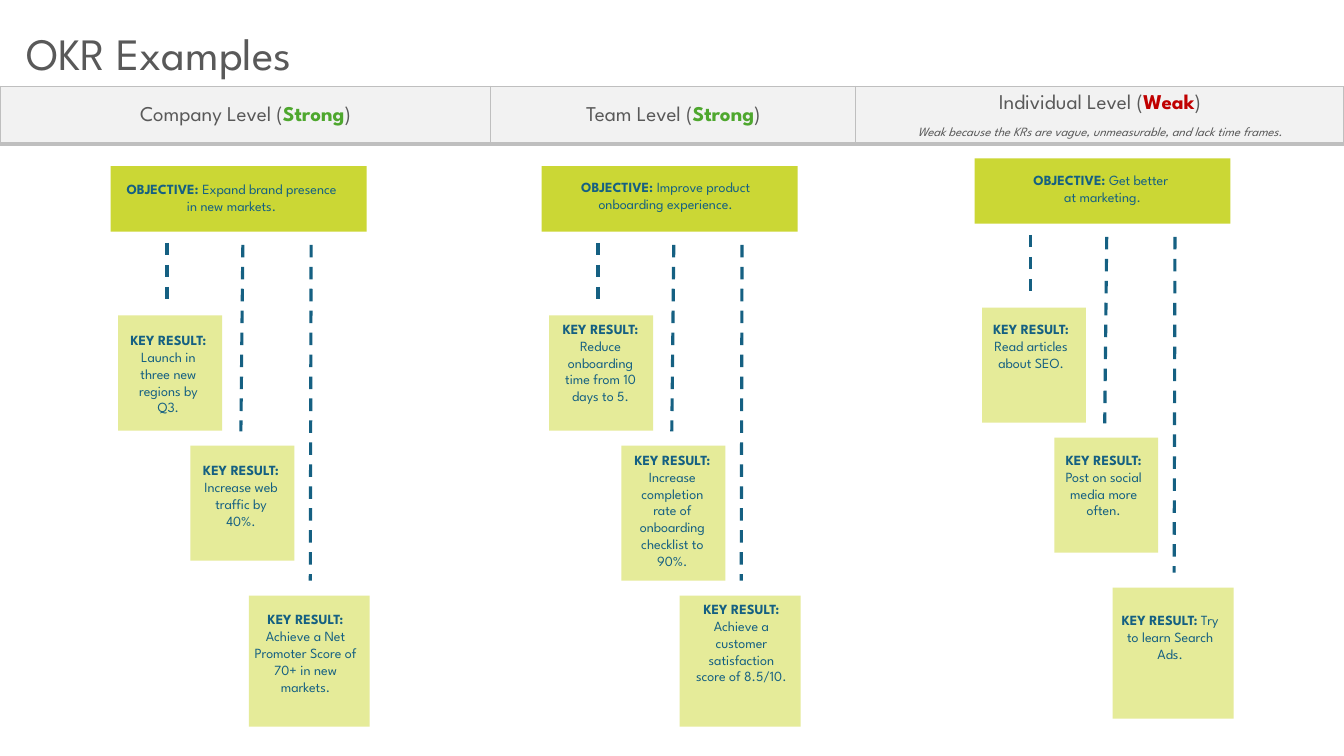
"""Build the OKR examples slide with three levels of objectives and key results."""
from lxml.etree import SubElement as Sub
from pptx import Presentation
from pptx.dml.color import RGBColor
from pptx.enum.dml import MSO_LINE as Dash
from pptx.enum.shapes import MSO_CONNECTOR as Conn, MSO_SHAPE as Shape
from pptx.enum.text import MSO_ANCHOR as Anchor, PP_ALIGN as Align
from pptx.oxml import parse_xml
from pptx.oxml.ns import nsdecls, qn
from pptx.util import Cm, Pt

FONT = "League Spartan"
GREY = RGBColor(0x59, 0x59, 0x59)
PALE = RGBColor(0xF2, 0xF2, 0xF2)
EDGE = RGBColor(0xBF, 0xBF, 0xBF)
GREEN = RGBColor(0x4E, 0xA7, 0x2E)
RED = RGBColor(0xC0, 0x00, 0x00)
LIME = RGBColor(0xCB, 0xD7, 0x35)
SOFT = RGBColor(0xE5, 0xEB, 0x99)
BLUE = RGBColor(0x15, 0x60, 0x82)

HEADS = [
    ("Company Level (", "Strong", GREEN, "", 12.37),
    ("Team Level (", "Strong", GREEN, "", 9.2),
    ("Individual Level (", "Weak", RED,
     "Weak because the KRs are vague, unmeasurable, and lack time frames.", 12.3),
]

GOAL = (0, 0, 6.45, 1.65)
CARDS = [(0.19, 3.76, 2.62, 2.9), (2.01, 7.04, 2.62, 2.9), (3.48, 10.82, 3.05, 3.3)]
LINES = [(1.42, 1.93, 1.42, 3.53), (3.33, 1.98, 3.28, 6.68), (5.05, 1.98, 5.03, 10.44)]

LEVELS = [
    {"at": (2.79, 4.19), "grow": (0, 0, 0), "notes": [
        ("Expand brand presence in new markets.", (2.9, 4.42, 5.87, 1.27)),
        ("Launch in three new regions by Q3.", (2.95, 8.23, 2.59, 2.51)),
        ("Increase web traffic by 40%.", (4.78, 11.51, 2.59, 2.01)),
        ("Achieve a Net Promoter Score of 70+ in new markets.", (6.15, 15.27, 3.1, 2.64))]},
    {"at": (13.65, 4.19), "grow": (0, 0.5, 0), "notes": [
        ("Improve product onboarding experience.", (13.84, 4.37, 5.87, 1.3)),
        ("Reduce onboarding time from 10 days to 5.", (13.84, 7.95, 2.59, 2.51)),
        ("Increase completion rate of onboarding checklist to 90%.",
         (15.65, 11.25, 2.59, 3.3)),
        ("Achieve a customer satisfaction score of 8.5/10.", (17.2, 15.01, 2.97, 2.84))]},
    {"at": (24.56, 3.99), "grow": (0, 0, 0), "notes": [
        ("Get better \nat marketing.", (24.56, 4.19, 6.45, 1.24)),
        ("Read articles about SEO.", (24.69, 7.95, 2.59, 2.51)),
        ("Post on social media more often.", (26.52, 11.25, 2.59, 2.57)),
        ("Try to learn Search Ads.", (27.94, 15.29, 3.1, 1.73))]},
]


def write(para, text, size=10, color=BLUE, bold=False, italic=False):
    for i, part in enumerate(text.split("\n")):
        if i:
            para.add_line_break()
        run = para.add_run()
        run.text = part
        font = run.font
        font.name, font.size = FONT, Pt(size)
        font.bold, font.italic = bold, italic
        font.color.rgb = color


def add_box(slide, box):
    frame = slide.shapes.add_textbox(*map(Cm, box)).text_frame
    frame.word_wrap = True
    return frame.paragraphs[0]


def add_card(slide, left, top, wide, high, color):
    card = slide.shapes.add_shape(Shape.RECTANGLE, Cm(left), Cm(top), Cm(wide), Cm(high))
    card.shadow.inherit = False
    card.fill.solid()
    card.fill.fore_color.rgb = color
    card.line.fill.background()


def add_dash(slide, ends):
    line = slide.shapes.add_connector(Conn.STRAIGHT, *map(Cm, ends))
    line.line.color.rgb = BLUE
    line.line.width = Pt(2.25)
    line.line.dash_style = Dash.DASH
    Sub(line._element.spPr, qn("a:effectLst"))


def add_edges(cell):
    props = cell._tc.get_or_add_tcPr()
    for i, (side, width) in enumerate(zip("LRTB", (1, 1, 1, 3))):
        props.insert(i, parse_xml(
            f'<a:ln{side} {nsdecls("a")} w="{Pt(width)}"><a:solidFill>'
            f'<a:srgbClr val="{EDGE}"/></a:solidFill></a:ln{side}>'))


def add_heads(slide):
    wide = sum(head[-1] for head in HEADS)
    table = slide.shapes.add_table(1, len(HEADS), 0, Cm(2.18), Cm(wide), Cm(1.42)).table
    table.first_row = table.horz_banding = False
    for i, (label, grade, color, note, width) in enumerate(HEADS):
        table.columns[i].width = Cm(width)
        cell = table.cell(0, i)
        cell.fill.solid()
        cell.fill.fore_color.rgb = PALE
        cell.vertical_anchor = Anchor.MIDDLE
        cell.margin_left = cell.margin_right = Cm(0.18)
        cell.margin_top = cell.margin_bottom = 0
        add_edges(cell)
        frame = cell.text_frame
        para = frame.paragraphs[0]
        write(para, label, size=15, color=GREY)
        write(para, grade, size=15, color=color, bold=True)
        write(para, ")", size=15, color=GREY)
        if note:
            write(frame.add_paragraph(), note, size=9, color=GREY, italic=True)
        for para in frame.paragraphs:
            para.alignment = Align.CENTER
            para.line_spacing = 1.15
            para.space_after = Pt(8)


def add_level(slide, level):
    x, y = level["at"]
    add_card(slide, x + GOAL[0], y + GOAL[1], *GOAL[2:], LIME)
    for (dx, dy, wide, high), more in zip(CARDS, level["grow"]):
        add_card(slide, x + dx, y + dy, wide, high + more, SOFT)
    for x1, y1, x2, y2 in LINES:
        add_dash(slide, (x + x1, y + y1, x + x2, y + y2))
    for i, (text, box) in enumerate(level["notes"]):
        para = add_box(slide, box)
        para.alignment = Align.CENTER
        write(para, "KEY RESULT:" if i else "OBJECTIVE: ", bold=True)
        write(para, " " + text if i else text)


def main():
    deck = Presentation()
    deck.slide_width, deck.slide_height = Cm(33.87), Cm(19.05)
    slide = deck.slides.add_slide(deck.slide_layouts[6])
    write(add_box(slide, (0.41, 0.53, 33.45, 1.63)), "OKR Examples", size=32, color=GREY)
    add_heads(slide)
    for level in LEVELS:
        add_level(slide, level)
    deck.save("out.pptx")


if __name__ == "__main__":
    main()
